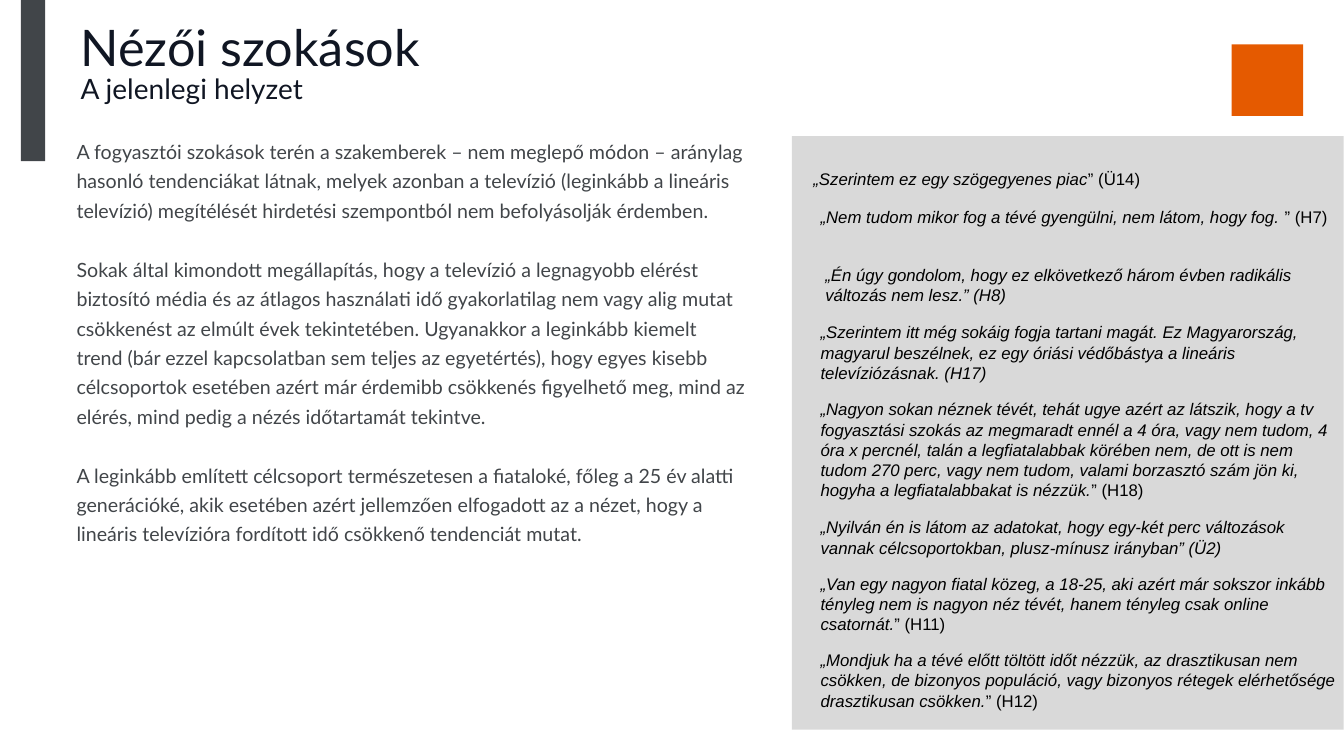
from dataclasses import dataclass

from pptx import Presentation
from pptx.dml.color import RGBColor as RGB
from pptx.enum.shapes import MSO_SHAPE as Shape
from pptx.util import Cm, Pt


@dataclass(frozen=True)
class Theme:
    dark: RGB = RGB(0x41, 0x45, 0x49)
    title: RGB = RGB(0x10, 0x16, 0x23)
    panel: RGB = RGB(0xD9, 0xD9, 0xD9)
    accent: RGB = RGB(0xE5, 0x5A, 0x00)
    quote: RGB = RGB(0, 0, 0)
    main_font: str = "Lato"
    quote_font: str = "Arial"
    title_size: int = 36
    subtitle_size: int = 20
    body_size: int = 14
    quote_size: int = 12


@dataclass(frozen=True)
class Box:
    """Position and size in centimetres."""
    left: float
    top: float
    width: float
    height: float


@dataclass(frozen=True)
class Quote:
    box: Box
    text: str
    source: str = ""  # upright ending after the italic words
    insets: tuple[float, float] = (0, 0.2)  # left and right, top


THEME = Theme()
QUOTE_LEFT, QUOTE_WIDTH, QUOTE_HEIGHT = 20.68, 13, 1.93


def quote_box(top: float, left: float = QUOTE_LEFT) -> Box:
    return Box(left, top, QUOTE_WIDTH, QUOTE_HEIGHT)


BLOCKS = [
    (Box(31.04, 1.12, 1.8, 1.8), THEME.accent),  # plain logo square
    (Box(19.96, 3.43, 13.9, 14.96), THEME.panel),  # quote panel
    (Box(0.53, 0, 0.61, 4.06), THEME.dark),  # side bar
]

BODY = [
    "A fogyasztói szokások terén a szakemberek – nem meglepő módon – aránylag "
    "hasonló tendenciákat látnak, melyek azonban a televízió (leginkább a lineáris "
    "televízió) megítélését hirdetési szempontból nem befolyásolják érdemben.",
    "Sokak által kimondott megállapítás, hogy a televízió a legnagyobb elérést "
    "biztosító média és az átlagos használati idő gyakorlatilag nem vagy alig mutat "
    "csökkenést az elmúlt évek tekintetében. Ugyanakkor a leginkább kiemelt trend "
    "(bár ezzel kapcsolatban sem teljes az egyetértés), hogy egyes kisebb "
    "célcsoportok esetében azért már érdemibb csökkenés figyelhető meg, mind az "
    "elérés, mind pedig a nézés időtartamát tekintve.",
    "A leginkább említett célcsoport természetesen a fiataloké, főleg a 25 év alatti "
    "generációké, akik esetében azért jellemzően elfogadott az a nézet, hogy a "
    "lineáris televízióra fordított idő csökkenő tendenciát mutat.",
]

QUOTES = [
    Quote(quote_box(4.06, left=20.5),
          "„Szerintem ez egy szögegyenes piac", "” (Ü14)"),
    Quote(quote_box(5),
          "„Nem tudom mikor fog a tévé gyengülni, nem látom, hogy fog. ", "” (H7)"),
    Quote(Box(20.55, 6.53, 12.62, 1.27),
          "„Én úgy gondolom, hogy ez elkövetkező három évben radikális változás nem "
          "lesz.” (H8)", insets=(0.25, 0.13)),
    Quote(quote_box(7.92),
          "„Szerintem itt még sokáig fogja tartani magát. Ez Magyarország, magyarul "
          "beszélnek, ez egy óriási védőbástya a lineáris televíziózásnak. (H17)"),
    Quote(quote_box(9.86),
          "„Nagyon sokan néznek tévét, tehát ugye azért az látszik, hogy a tv "
          "fogyasztási szokás az megmaradt ennél a 4 óra, vagy nem tudom, 4 óra x "
          "percnél, talán a legfiatalabbak körében nem, de ott is nem tudom 270 perc, "
          "vagy nem tudom, valami borzasztó szám jön ki, hogyha a legfiatalabbakat is "
          "nézzük.", "” (H18)"),
    Quote(quote_box(12.83),
          "„Nyilván én is látom az adatokat, hogy egy-két perc változások vannak "
          "célcsoportokban, plusz-mínusz irányban” (Ü2)"),
    Quote(quote_box(14.25),
          "„Van egy nagyon fiatal közeg, a 18-25, aki azért már sokszor inkább tényleg "
          "nem is nagyon néz tévét, hanem tényleg csak online csatornát.", "” (H11)"),
    Quote(quote_box(16.18),
          "„Mondjuk ha a tévé előtt töltött időt nézzük, az drasztikusan nem csökken, "
          "de bizonyos populáció, vagy bizonyos rétegek elérhetősége drasztikusan "
          "csökken.", "” (H12)"),
]


def place(box: Box) -> tuple[Cm, Cm, Cm, Cm]:
    return Cm(box.left), Cm(box.top), Cm(box.width), Cm(box.height)


def add_block(s, box: Box, color: RGB) -> None:
    sp = s.shapes.add_shape(Shape.RECTANGLE, *place(box))
    sp.shadow.inherit = False
    sp.fill.solid()
    sp.fill.fore_color.rgb = color
    sp.line.fill.background()


def add_text(s, box: Box, side: float = 0, top: float = 0):
    tf = s.shapes.add_textbox(*place(box)).text_frame
    tf.word_wrap = True
    tf.margin_left = tf.margin_right = Cm(side)
    tf.margin_top = tf.margin_bottom = Cm(top)
    return tf


def style(r, font: str, size: int, color: RGB, italic: bool = False) -> None:
    r.font.name, r.font.size, r.font.italic = font, Pt(size), italic
    r.font.color.rgb = color


def add_title(s) -> None:
    p = add_text(s, Box(2.03, 0.64, 21.46, 1.37)).paragraphs[0]
    p.text = "Nézői szokások\vA jelenlegi helyzet"
    p.line_spacing = 0.85
    for r, size in zip(p.runs, (THEME.title_size, THEME.subtitle_size)):
        style(r, THEME.main_font, size, THEME.title)


def add_body(s) -> None:
    tf = add_text(s, Box(1.93, 3.38, 16.92, 14.53))
    tf.text = "\n".join(BODY)
    for i, p in enumerate(tf.paragraphs):
        p.line_spacing = 1.25
        p.space_before = Pt(21 if i else 0)
        style(p.runs[0], THEME.main_font, THEME.body_size, THEME.dark)


def add_quote(s, quote: Quote) -> None:
    p = add_text(s, quote.box, *quote.insets).paragraphs[0]
    for text, italic in ((quote.text, True), (quote.source, False)):
        if text:
            r = p.add_run()
            r.text = text
            style(r, THEME.quote_font, THEME.quote_size, THEME.quote, italic)


def main() -> None:
    prs = Presentation()
    prs.slide_width, prs.slide_height = Cm(33.87), Cm(19.05)
    s = prs.slides.add_slide(prs.slide_layouts[6])

    # Background blocks
    for box, color in BLOCKS:
        add_block(s, box, color)

    # Title and running text
    add_title(s)
    add_body(s)

    # Interview quotes
    for quote in QUOTES:
        add_quote(s, quote)

    prs.save("out.pptx")


if __name__ == "__main__":
    main()
